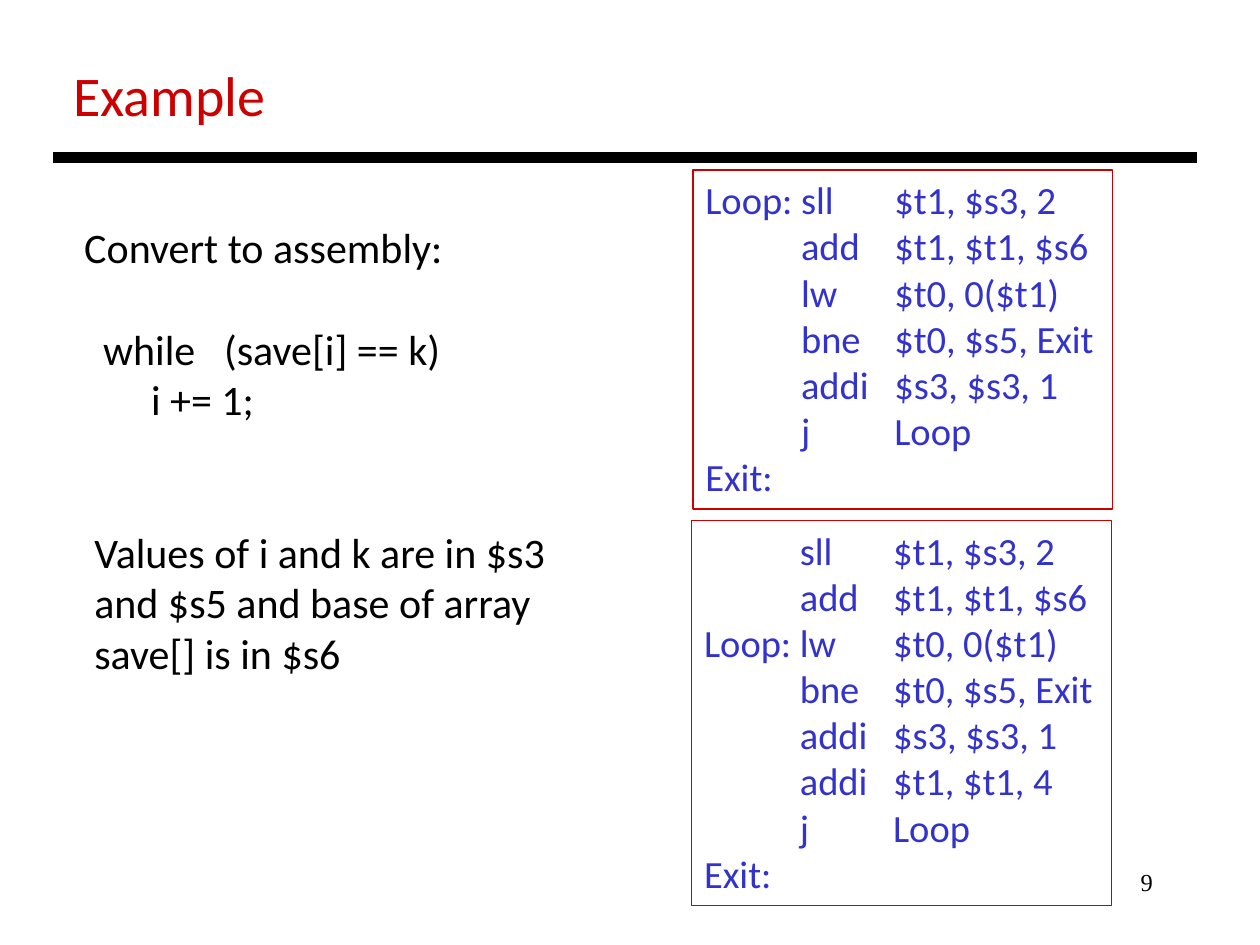
from dataclasses import dataclass

from lxml.etree import SubElement
from pptx import Presentation
from pptx.dml.color import RGBColor as Color
from pptx.enum.shapes import MSO_CONNECTOR as Connector, MSO_SHAPE as Shape
from pptx.enum.text import MSO_ANCHOR as Anchor, MSO_AUTO_SIZE as AutoSize, PP_ALIGN as Align
from pptx.oxml.ns import qn
from pptx.util import Inches, Pt

SLIDE_WIDTH, SLIDE_HEIGHT = Inches(10), Inches(7.5)
COLUMNS, ROWS = 100, 75


@dataclass(frozen=True)
class TextStyle:
    """Font, size and colour of a run."""
    font: str
    size: float
    color: str


@dataclass(frozen=True)
class Theme:
    """Colours and type sizes of the slide."""
    title: TextStyle = TextStyle("Calibri", 32, "CC0000")
    body: TextStyle = TextStyle("Calibri", 24, "000000")
    code: TextStyle = TextStyle("Calibri", 22, "3333CC")
    number: TextStyle = TextStyle("Times New Roman", 14, "000000")
    rule: str = "000000"
    frame: str = "CC0000"
    rule_width: float = 6
    frame_width: float = 0.75


THEME = Theme()
BODY_LINE = THEME.body.size * 1.22
CODE_STOPS = (7.6, 15)

QUESTION = [
    ("Convert to assembly:", 0, ()),
    ("\twhile\t(save[i] == k)", 1, (1.5, 11.1)),
    ("\ti += 1;", 0, (5.3,)),
    ("\tValues of i and k are in $s3", 2, (0.8,)),
    ("\tand $s5 and base of array", 0, (0.8,)),
    ("\tsave[] is in $s6", 0, (0.8,)),
]

FIRST_VERSION = [
    ("Loop:", "sll", "$t1, $s3, 2"),
    ("", "add", "$t1, $t1, $s6"),
    ("", "lw", "$t0, 0($t1)"),
    ("", "bne", "$t0, $s5, Exit"),
    ("", "addi", "$s3, $s3, 1"),
    ("", "j", "Loop"),
    ("Exit:",),
]

FASTER_VERSION = [
    ("", "sll", "$t1, $s3, 2"),
    ("", "add", "$t1, $t1, $s6"),
    ("Loop:", "lw", "$t0, 0($t1)"),
    ("", "bne", "$t0, $s5, Exit"),
    ("", "addi", "$s3, $s3, 1"),
    ("", "addi", "$t1, $t1, 4"),
    ("", "j", "Loop"),
    ("Exit:",),
]


def across(columns):
    """Return the length of a number of grid columns."""
    return round(SLIDE_WIDTH * columns / COLUMNS)


def down(rows):
    """Return the length of a number of grid rows."""
    return round(SLIDE_HEIGHT * rows / ROWS)


def area(left, top, width, height):
    """Return a grid area as slide lengths."""
    return across(left), down(top), across(width), down(height)


def prepare_frame(shape):
    """Give a shape's text a fixed, wrapped frame that starts at the top."""
    frame = shape.text_frame
    frame.auto_size = AutoSize.NONE
    frame.word_wrap = True
    frame.vertical_anchor = Anchor.TOP
    frame.margin_right = 0
    return frame


def write_paragraph(frame, text, style, align=Align.LEFT, space_before=0, stops=()):
    """Write one paragraph with its tab stops in grid columns."""
    first = frame.paragraphs[0]
    paragraph = frame.add_paragraph() if first.runs else first
    paragraph.alignment = align
    paragraph.space_before = Pt(space_before)
    if stops:
        tab_list = SubElement(paragraph._p.get_or_add_pPr(), qn("a:tabLst"))
        for stop in stops:
            SubElement(tab_list, qn("a:tab"), pos=str(across(stop)), algn="l")
    run = paragraph.add_run()
    run.text = text
    run.font.name = style.font
    run.font.size = Pt(style.size)
    run.font.color.rgb = Color.from_string(style.color)


def add_title(slide, text):
    """Place and write the title."""
    title = slide.shapes.title
    title.left, title.top, title.width, title.height = area(4.8, 4.3, 90, 6.4)
    write_paragraph(prepare_frame(title), text, THEME.title)


def add_rule(slide):
    """Draw the heavy line under the title."""
    rule = slide.shapes.add_connector(
        Connector.STRAIGHT, across(4.2), down(12.5), across(95), down(12.5))
    rule.line.color.rgb = Color.from_string(THEME.rule)
    rule.line.width = Pt(THEME.rule_width)
    SubElement(rule._element.spPr, qn("a:effectLst"))


def add_question(slide):
    """Write the loop and the meaning of its registers."""
    frame = prepare_frame(slide.shapes.add_textbox(*area(5.7, 17.1, 38.9, 37.4)))
    for text, skipped_lines, stops in QUESTION:
        write_paragraph(frame, text, THEME.body,
                        space_before=skipped_lines * BODY_LINE, stops=stops)


def add_code_box(slide, place, lines):
    """Draw a framed listing with label, operation and operand columns."""
    box = slide.shapes.add_shape(Shape.RECTANGLE, *place)
    box.shadow.inherit = False
    box.fill.background()
    box.line.color.rgb = Color.from_string(THEME.frame)
    box.line.width = Pt(THEME.frame_width)
    frame = prepare_frame(box)
    for fields in lines:
        write_paragraph(frame, "\t".join(fields), THEME.code, stops=CODE_STOPS)


def add_slide_number(slide, text):
    """Write the page number at the lower right."""
    frame = prepare_frame(slide.shapes.add_textbox(*area(71.7, 68.3, 19.8, 5)))
    write_paragraph(frame, text, THEME.number, align=Align.RIGHT)


def main():
    """Build and save the slide."""
    presentation = Presentation()
    presentation.slide_width, presentation.slide_height = SLIDE_WIDTH, SLIDE_HEIGHT
    slide = presentation.slides.add_slide(presentation.slide_layouts[5])
    add_slide_number(slide, "9")
    add_title(slide, "Example")
    add_rule(slide)
    add_question(slide)
    add_code_box(slide, area(55, 13.5, 33.3, 26.9), FIRST_VERSION)
    add_code_box(slide, area(54.9, 41.3, 33.3, 30.6), FASTER_VERSION)
    presentation.save("out.pptx")


if __name__ == "__main__":
    main()
